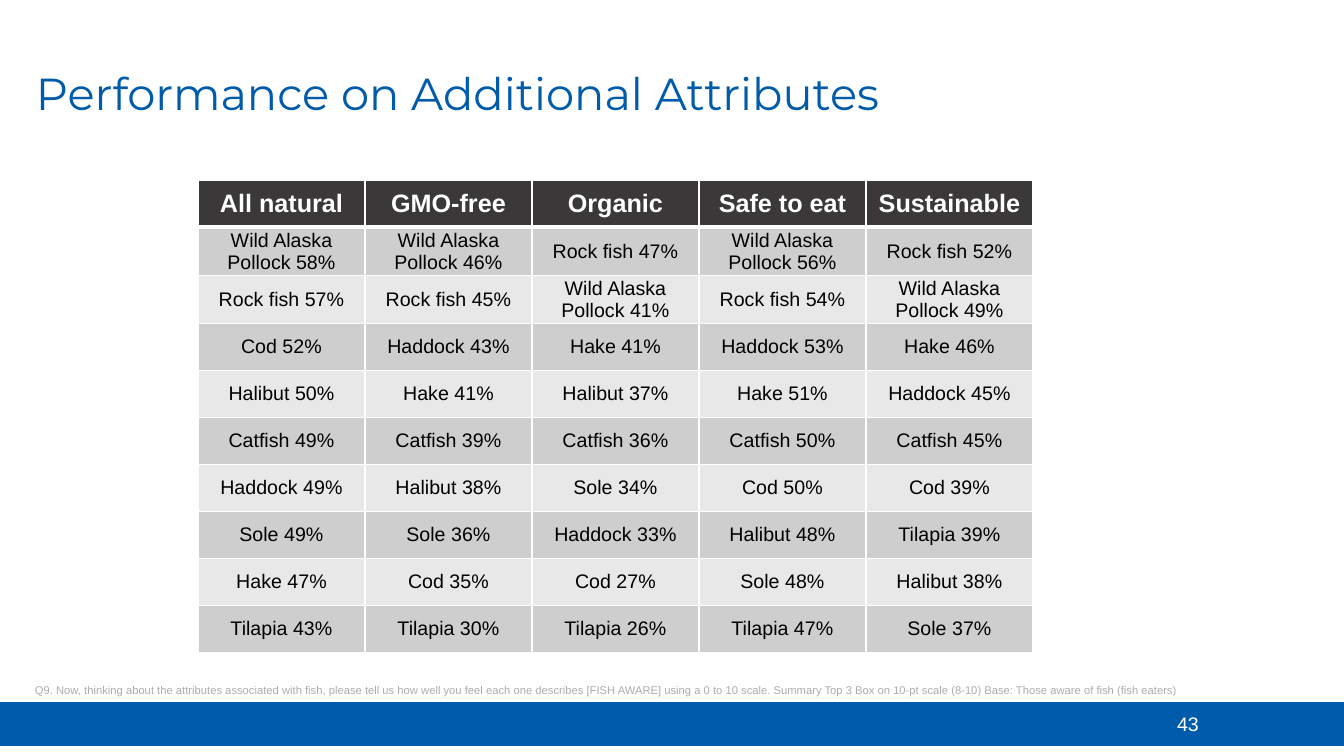
from lxml import etree
from pptx import Presentation
from pptx.dml.color import RGBColor
from pptx.enum.shapes import MSO_SHAPE
from pptx.enum.text import MSO_ANCHOR, PP_ALIGN
from pptx.oxml.ns import qn
from pptx.util import Pt

TITLE = "Performance on Additional Attributes"
FOOTNOTE = (
    "Q9. Now, thinking about the attributes associated with fish, please tell us how well "
    "you feel each one describes [FISH AWARE] using a 0 to 10 scale. Summary Top 3 Box on "
    "10-pt scale (8-10) Base: Those aware of fish (fish eaters)"
)
PAGE_NUMBER = "43"
POLLOCK = "Wild Alaska Pollock"
RANKINGS = {
    "All natural": [
        (POLLOCK, 58), ("Rock fish", 57), ("Cod", 52), ("Halibut", 50), ("Catfish", 49),
        ("Haddock", 49), ("Sole", 49), ("Hake", 47), ("Tilapia", 43),
    ],
    "GMO-free": [
        (POLLOCK, 46), ("Rock fish", 45), ("Haddock", 43), ("Hake", 41), ("Catfish", 39),
        ("Halibut", 38), ("Sole", 36), ("Cod", 35), ("Tilapia", 30),
    ],
    "Organic": [
        ("Rock fish", 47), (POLLOCK, 41), ("Hake", 41), ("Halibut", 37), ("Catfish", 36),
        ("Sole", 34), ("Haddock", 33), ("Cod", 27), ("Tilapia", 26),
    ],
    "Safe to eat": [
        (POLLOCK, 56), ("Rock fish", 54), ("Haddock", 53), ("Hake", 51), ("Catfish", 50),
        ("Cod", 50), ("Halibut", 48), ("Sole", 48), ("Tilapia", 47),
    ],
    "Sustainable": [
        ("Rock fish", 52), (POLLOCK, 49), ("Hake", 46), ("Haddock", 45), ("Catfish", 45),
        ("Cod", 39), ("Tilapia", 39), ("Halibut", 38), ("Sole", 37),
    ],
}

BLUE = RGBColor(0x00, 0x5B, 0xAA)
WHITE = RGBColor(0xFF, 0xFF, 0xFF)
BLACK = RGBColor(0x00, 0x00, 0x00)
CHARCOAL = RGBColor(0x3A, 0x38, 0x38)
FOOTNOTE_GRAY = RGBColor(0xAE, 0xAB, 0xAB)
BANDS = (RGBColor(0xE8, 0xE8, 0xE8), RGBColor(0xCE, 0xCE, 0xCE))

LEFT, CENTER = PP_ALIGN.LEFT, PP_ALIGN.CENTER
TOP, MIDDLE, BOTTOM = MSO_ANCHOR.TOP, MSO_ANCHOR.MIDDLE, MSO_ANCHOR.BOTTOM
RECTANGLE = MSO_SHAPE.RECTANGLE

SLIDE_WIDTH, SLIDE_HEIGHT = 1344, 756
TABLE_LEFT, TABLE_TOP = 198, 180
COLUMN_WIDTH, ROW_HEIGHT = 167, 47
PX_PER_INCH = 100.8


def px(length):
    return round(length * 914400 / PX_PER_INCH)


def style_paragraph(paragraph, size, color, font="Arial", align=LEFT, bold=False):
    paragraph.alignment = align
    paragraph.font.name = font
    paragraph.font.size = Pt(size)
    paragraph.font.bold = bold
    paragraph.font.color.rgb = color


def add_text(slide, box, text, anchor, size, color, **style):
    frame = slide.shapes.add_textbox(*map(px, box)).text_frame
    frame.word_wrap = True
    frame.vertical_anchor = anchor
    frame.text = text
    paragraph = frame.paragraphs[0]
    style_paragraph(paragraph, size, color, **style)
    return paragraph


def set_borders(cell, widths):
    """Draw white cell borders; widths gives points by side: L, R, T, B."""
    properties = cell._tc.get_or_add_tcPr()
    for side, width in widths.items():
        line = etree.SubElement(properties, qn(f"a:ln{side}"), w=str(Pt(width)))
        fill = etree.SubElement(line, qn("a:solidFill"))
        etree.SubElement(fill, qn("a:srgbClr"), val=str(WHITE))


def fill_cell(cell, row, text):
    is_header = row == 0
    set_borders(cell, {"L": 1, "R": 1, "T": 3 if row == 1 else 1, "B": 3 if is_header else 1})
    cell.fill.solid()
    cell.fill.fore_color.rgb = CHARCOAL if is_header else BANDS[row % 2]
    cell.vertical_anchor = MIDDLE
    if not is_header:
        cell.margin_left = cell.margin_right = cell.margin_top = px(1)
        cell.margin_bottom = 0
    cell.text = text
    style_paragraph(
        cell.text_frame.paragraphs[0],
        18 if is_header else 14,
        WHITE if is_header else BLACK,
        align=CENTER,
        bold=is_header,
    )


def add_rankings(slide):
    columns = [
        [attribute] + [f"{fish} {percent}%" for fish, percent in ranking]
        for attribute, ranking in RANKINGS.items()
    ]
    row_count, column_count = len(columns[0]), len(columns)
    table = slide.shapes.add_table(
        row_count, column_count, px(TABLE_LEFT), px(TABLE_TOP),
        px(COLUMN_WIDTH * column_count), px(ROW_HEIGHT * row_count),
    ).table
    for column, texts in enumerate(columns):
        for row, text in enumerate(texts):
            fill_cell(table.cell(row, column), row, text)


def main():
    presentation = Presentation()
    presentation.slide_width, presentation.slide_height = px(SLIDE_WIDTH), px(SLIDE_HEIGHT)
    slide = presentation.slides.add_slide(presentation.slide_layouts[6])

    footer_bar = slide.shapes.add_shape(RECTANGLE, 0, px(703), px(SLIDE_WIDTH), px(42))
    footer_bar.shadow.inherit = False
    footer_bar.fill.solid()
    footer_bar.fill.fore_color.rgb = BLUE
    footer_bar.line.color.rgb = BLUE
    footer_bar.line.width = Pt(1)

    add_text(slide, (1134, 707, 108, 40), PAGE_NUMBER, TOP, 14, WHITE, align=CENTER)
    add_rankings(slide)
    title = add_text(slide, (26, 15, 1146, 110), TITLE, BOTTOM, 32, BLUE, font="Montserrat")
    title.line_spacing = 0.9
    add_text(slide, (25, 678, 1182, 24), FOOTNOTE, TOP, 8, FOOTNOTE_GRAY)

    presentation.save("out.pptx")


if __name__ == "__main__":
    main()
